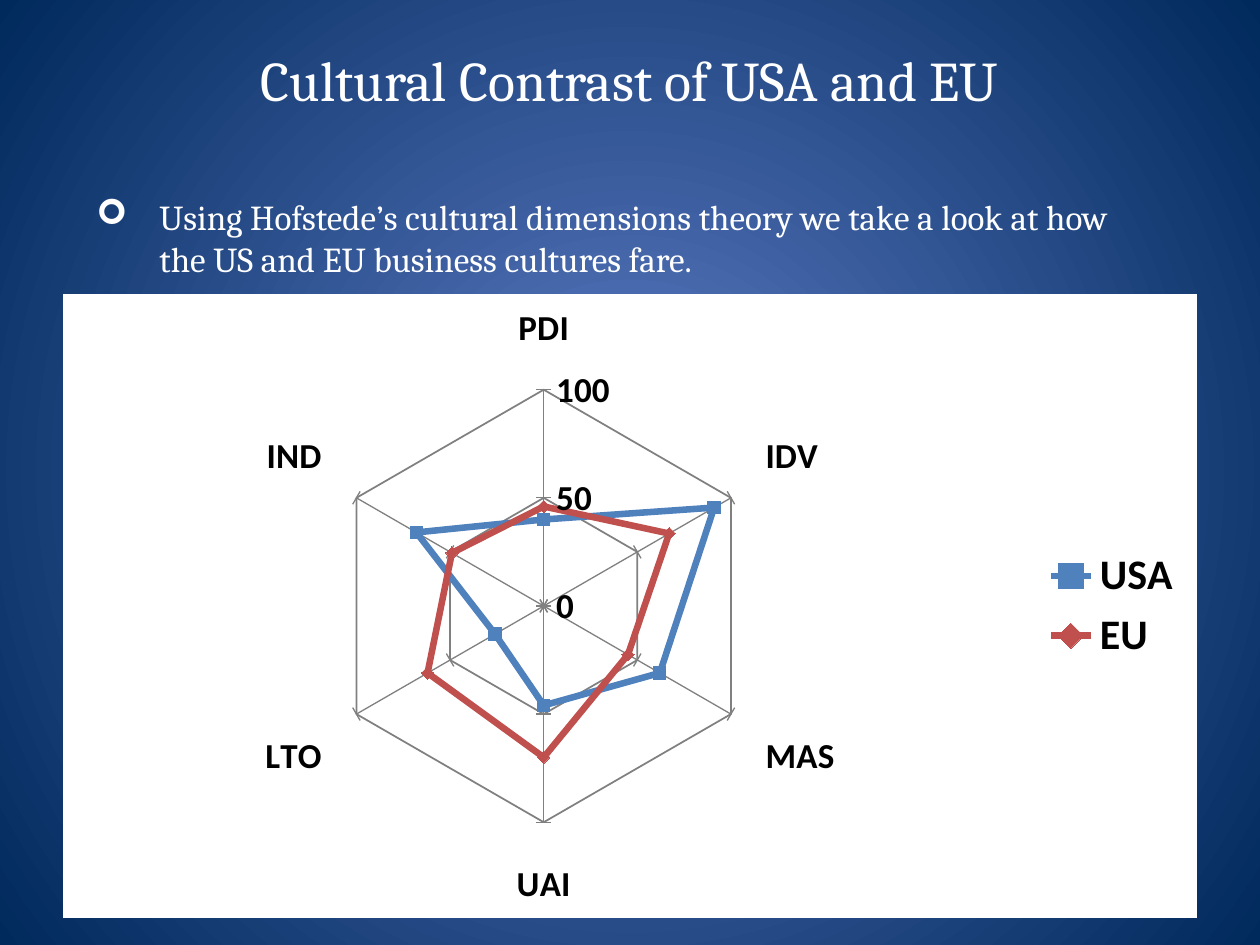
from dataclasses import dataclass

from lxml import etree
from pptx import Presentation
from pptx import util as u
from pptx.chart.data import CategoryChartData
from pptx.dml.color import RGBColor
from pptx.enum import chart as ch
from pptx.enum import text as tx
from pptx.oxml import parse_xml
from pptx.oxml.ns import nsdecls, qn

DPI = 126
WHITE, BLACK, GREY = "FFFFFF", "000000", "808080"


@dataclass
class Box:
    x: int
    y: int
    w: int
    h: int

    def emu(self) -> list:
        return [px(n) for n in (self.x, self.y, self.w, self.h)]


@dataclass
class Region:
    name: str
    vals: tuple
    color: str
    mark: ch.XL_MARKER_STYLE


DIMS = ("PDI", "IDV", "MAS", "UAI", "LTO", "IND")
REGIONS = (
    Region("USA", (40, 91, 62, 46, 26, 68), "4F81BD", ch.XL_MARKER_STYLE.SQUARE),
    Region("EU", (46, 67, 45, 70, 62, 49), "C0504D", ch.XL_MARKER_STYLE.DIAMOND),
)


def px(n: int) -> int:
    return u.Inches(n / DPI)


def rgb(code: str) -> RGBColor:
    return RGBColor.from_string(code)


def style(font, size: int, color: str, name: str, bold: bool = False) -> None:
    font.size, font.name, font.bold = u.Pt(size), name, bold
    font.color.rgb = rgb(color)


def stroke(line, color: str, width: float) -> None:
    line.color.rgb = rgb(color)
    line.width = u.Pt(width)


def glow(slide, inner: str, outer: str) -> None:
    """Fill the background with a gradient spreading from the centre."""
    fill = slide.background.fill
    fill.gradient()
    for stop, color, pos in zip(fill.gradient_stops, (inner, outer), (0, 1)):
        stop.color.rgb, stop.position = rgb(color), pos
    grad = slide._element.find(".//" + qn("a:gradFill"))
    grad.replace(grad.find(qn("a:lin")), parse_xml(
        f'<a:path {nsdecls("a")} path="circle">'
        '<a:fillToRect l="50000" t="50000" r="50000" b="50000"/></a:path>'))


def write(slide, box: Box, words: str, size: int, anchor):
    """Add a one-paragraph text box and return the paragraph."""
    frame = slide.shapes.add_textbox(*box.emu()).text_frame
    frame.word_wrap, frame.vertical_anchor = True, anchor
    para = frame.paragraphs[0]
    run = para.add_run()
    run.text = words
    style(run.font, size, WHITE, "Cambria")
    return para


def bullet(para, sign: str, indent: int) -> None:
    props = para._p.get_or_add_pPr()
    props.set("marL", str(px(indent)))
    props.set("indent", str(-px(indent)))
    etree.SubElement(props, qn("a:buFont")).set("typeface", "Wingdings")
    etree.SubElement(props, qn("a:buChar")).set("char", sign)


def radar(slide, box: Box) -> None:
    data = CategoryChartData()
    data.categories = DIMS
    for reg in REGIONS:
        data.add_series(reg.name, reg.vals)
    chart = slide.shapes.add_chart(
        ch.XL_CHART_TYPE.RADAR_MARKERS, *box.emu(), data).chart
    chart.has_title = False
    style(chart.font, 18, WHITE, "Calibri")
    chart._chartSpace.find(qn("c:chart")).addnext(parse_xml(
        f'<c:spPr {nsdecls("c", "a")}><a:solidFill><a:srgbClr val="{WHITE}"/>'
        '</a:solidFill><a:ln><a:noFill/></a:ln></c:spPr>'))

    chart.has_legend = True
    chart.legend.position = ch.XL_LEGEND_POSITION.RIGHT
    chart.legend.include_in_layout = False
    style(chart.legend.font, 24, BLACK, "Calibri", True)

    scale = chart.value_axis
    for axis in (chart.category_axis, scale):
        axis.major_tick_mark = ch.XL_TICK_MARK.CROSS
        axis.has_major_gridlines = True
        style(axis.tick_labels.font, 20, BLACK, "Calibri", True)
        stroke(axis.format.line, GREY, 0.75)
        stroke(axis.major_gridlines.format.line, GREY, 1)
    scale.minimum_scale, scale.maximum_scale, scale.major_unit = 0, 100, 50

    plot = chart.plots[0]
    plot.vary_by_categories = False
    for ser, reg in zip(plot.series, REGIONS):
        stroke(ser.format.line, reg.color, 3.75)
        ser.marker.style, ser.marker.size = reg.mark, 7
        ser.marker.format.fill.solid()
        ser.marker.format.fill.fore_color.rgb = rgb(reg.color)
        stroke(ser.marker.format.line, reg.color, 0.75)


def main() -> None:
    deck = Presentation()
    deck.slide_width, deck.slide_height = px(1260), px(945)
    slide = deck.slides.add_slide(deck.slide_layouts[6])
    glow(slide, "5E7CC5", "00295C")
    title = write(slide, Box(63, 0, 1134, 158), "Cultural Contrast of USA and EU",
                  32, tx.MSO_ANCHOR.MIDDLE)
    title.alignment = tx.PP_ALIGN.CENTER
    radar(slide, Box(63, 294, 1134, 624))
    intro = write(slide, Box(84, 189, 1050, 97),
                  "Using Hofstede’s cultural dimensions theory we take a look at "
                  "how the US and EU business cultures fare.",
                  20, tx.MSO_ANCHOR.TOP)
    bullet(intro, "➢", 63)
    deck.save("out.pptx")


if __name__ == "__main__":
    main()
